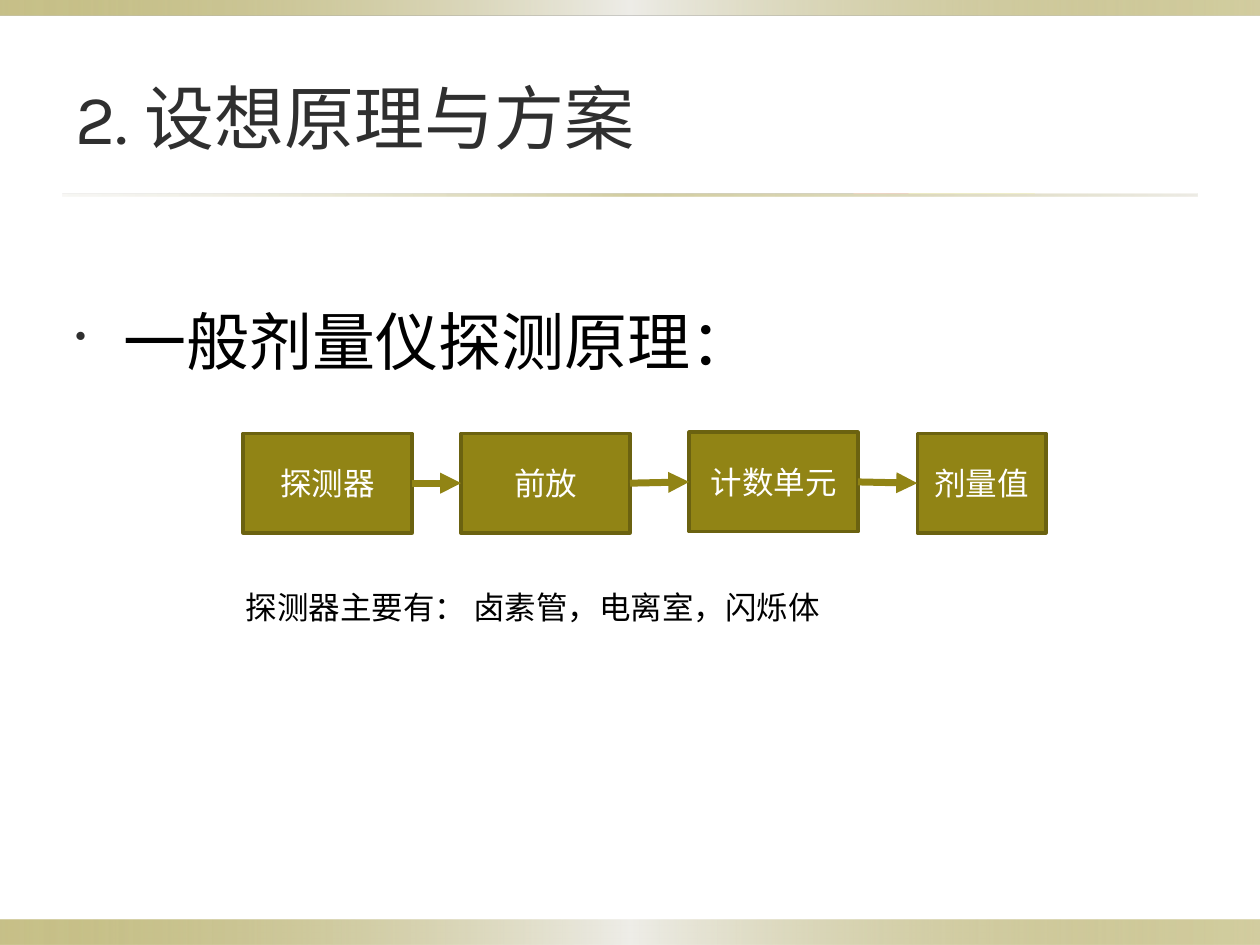
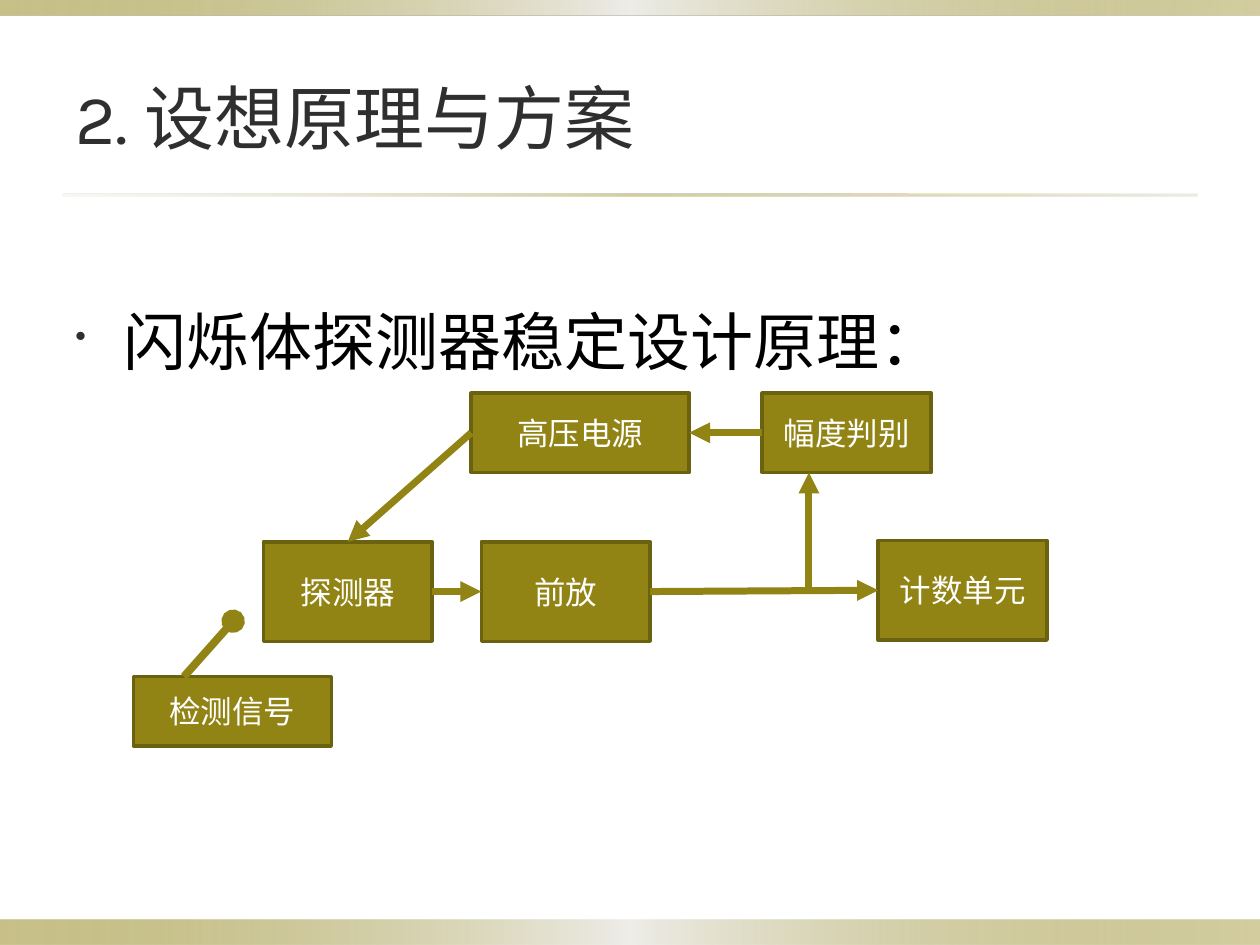
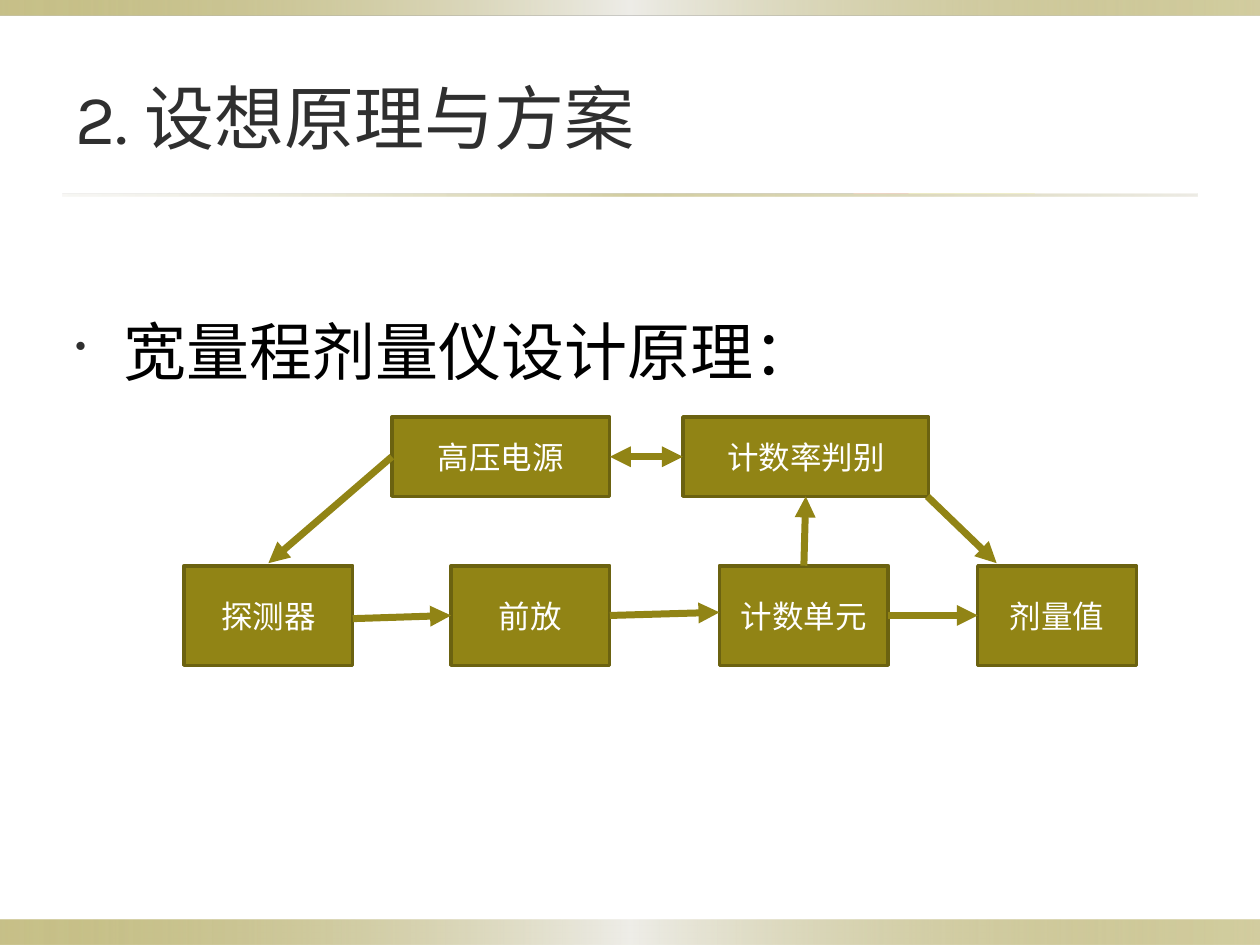
"""Build three slides on the principle and design of a dose meter."""
from lxml import etree
from pptx import Presentation
from pptx.dml.color import RGBColor
from pptx.enum import shapes, text
from pptx.oxml import ns
from pptx.util import Pt

PX = 9144
OLIVE, EDGE, DARK = "918415", "6B6210", "2F2F2F"
BAND = [(0, OLIVE, 50), (50, "EEEDE8", 100), (100, OLIVE, 40)]
RULE = [(0, "DCD9CC", 20), (50, OLIVE, 40), (100, "DCD9CC", 50)]
BARS = [(0, 730, 1000, 20, BAND), (0, 0, 1000, 12, BAND), (50, 154, 900, 2, RULE)]
TITLE = "2. 设想原理与方案"
TOP, LEFT, DOWN, RIGHT = range(4)

SLIDES = [
    {
        "head": "一般剂量仪探测原理：", "y": 175,
        "boxes": [("探测器", 193, 344, 134, 79), ("前放", 366, 344, 134, 79),
                  ("计数单元", 547, 343, 134, 79), ("剂量值", 728, 344, 102, 79)],
        "links": [(("探测器", RIGHT), ("前放", LEFT), "tail"),
                  (("前放", RIGHT), ("计数单元", LEFT), "tail"),
                  (("计数单元", RIGHT), ("剂量值", LEFT), "tail")],
        "note": "探测器主要有： 卤素管，电离室，闪烁体",
    },
    {
        "head": "闪烁体探测器稳定设计原理：", "y": 175,
        "boxes": [("探测器", 209, 430, 134, 79), ("前放", 382, 430, 134, 79),
                  ("计数单元", 697, 429, 134, 79), ("高压电源", 374, 312, 173, 63),
                  ("检测信号", 106, 537, 157, 55), ("幅度判别", 605, 312, 134, 63)],
        "links": [(("探测器", RIGHT), ("前放", LEFT), "tail"),
                  (("前放", RIGHT), ("计数单元", LEFT), "tail"),
                  ((146, 537), (185, 493), "oval"),
                  ((642, 468), (642, 375), "tail"),
                  (("幅度判别", LEFT), ("高压电源", RIGHT), "tail"),
                  (("高压电源", LEFT), ("探测器", TOP), "tail")],
    },
    {
        "head": "宽量程剂量仪设计原理：", "y": 183,
        "boxes": [("探测器", 146, 449, 134, 79), ("前放", 358, 449, 126, 79),
                  ("计数单元", 571, 449, 134, 79), ("高压电源", 311, 331, 173, 63),
                  ("计数率判别", 542, 331, 195, 63), ("剂量值", 776, 449, 126, 79)],
        "links": [((280, 491), ("前放", LEFT), "tail"),
                  (("前放", RIGHT), (571, 486), "tail"),
                  (("计数率判别", LEFT), ("高压电源", RIGHT), "both"),
                  (("高压电源", LEFT), (213, 447), "tail"),
                  (("计数单元", RIGHT), ("剂量值", LEFT), "tail"),
                  (("计数单元", TOP), ("计数率判别", DOWN), "tail"),
                  ((736, 394), (791, 447), "tail")],
    },
]
ENDS = {"tail": [("tailEnd", "triangle")], "oval": [("tailEnd", "oval")],
        "both": [("headEnd", "triangle"), ("tailEnd", "triangle")]}


def rgb(code):
    return RGBColor.from_string(code)


def write(shape, words, size, color, font="Karla"):
    frame = shape.text_frame
    frame.text = words
    frame.word_wrap = True
    para = frame.paragraphs[0]
    face = para.runs[0].font
    face.size, face.name = Pt(size), font
    face.color.rgb = rgb(color)
    return frame, para


deck = Presentation()
deck.slide_width, deck.slide_height = 1000 * PX, 750 * PX

for page in SLIDES:
    items = deck.slides.add_slide(deck.slide_layouts[6]).shapes

    for *area, stops in BARS:
        bar = items.add_shape(shapes.MSO_SHAPE.RECTANGLE, *[n * PX for n in area])
        bar.shadow.inherit = False
        bar.line.fill.background()
        bar.fill.gradient()
        bar.fill.gradient_angle = 0
        grad = bar.element.spPr.find(".//" + ns.qn("a:gsLst"))
        for stop in list(grad):
            grad.remove(stop)
        for place, color, alpha in stops:
            stop = etree.SubElement(grad, ns.qn("a:gs"), pos=str(place * 1000))
            tint = etree.SubElement(stop, ns.qn("a:srgbClr"), val=color)
            etree.SubElement(tint, ns.qn("a:alpha"), val=str(alpha * 1000))

    title = items.add_textbox(50 * PX, 30 * PX, 900 * PX, 125 * PX)
    frame, para = write(title, TITLE, 40, DARK)
    frame.vertical_anchor = text.MSO_ANCHOR.MIDDLE

    body = items.add_textbox(50 * PX, page["y"] * PX, 900 * PX, 513 * PX)
    frame, para = write(body, page["head"], 36, "000000")
    para.line_spacing = 2.0
    para.space_before = Pt(7)
    props = para._p.get_or_add_pPr()
    props.set("marL", str(38 * PX))
    props.set("indent", str(-38 * PX))
    tint = etree.SubElement(props, ns.qn("a:buClr"))
    etree.SubElement(tint, ns.qn("a:srgbClr"), val=DARK)
    etree.SubElement(props, ns.qn("a:buSzPct"), val="50000")
    etree.SubElement(props, ns.qn("a:buChar"), char="•")

    boxes = {}
    for name, *area in page["boxes"]:
        box = items.add_shape(shapes.MSO_SHAPE.RECTANGLE, *[n * PX for n in area])
        box.shadow.inherit = False
        box.fill.solid()
        box.fill.fore_color.rgb = rgb(OLIVE)
        box.line.color.rgb = rgb(EDGE)
        box.line.width = Pt(2)
        frame, para = write(box, name, 18, "FFFFFF")
        frame.vertical_anchor = text.MSO_ANCHOR.MIDDLE
        para.alignment = text.PP_ALIGN.CENTER
        boxes[name] = box

    for start, end, kind in page["links"]:
        spots = [(0, 0) if spot[0] in boxes else spot for spot in (start, end)]
        link = items.add_connector(shapes.MSO_CONNECTOR.STRAIGHT,
                                   *[n * PX for spot in spots for n in spot])
        if start[0] in boxes:
            link.begin_connect(boxes[start[0]], start[1])
        if end[0] in boxes:
            link.end_connect(boxes[end[0]], end[1])
        link.line.color.rgb = rgb(OLIVE)
        link.line.width = Pt(4.5 if kind == "oval" else 4)
        for tag, form in ENDS[kind]:
            etree.SubElement(link.line._get_or_add_ln(), ns.qn("a:" + tag), type=form)
        etree.SubElement(link.element.spPr, ns.qn("a:effectLst"))

    if "note" in page:
        note = items.add_textbox(185 * PX, 462 * PX, 535 * PX, 40 * PX)
        frame, para = write(note, page["note"], 18, "000000", "Calibri")
        frame.auto_size = text.MSO_AUTO_SIZE.SHAPE_TO_FIT_TEXT

deck.save("out.pptx")
